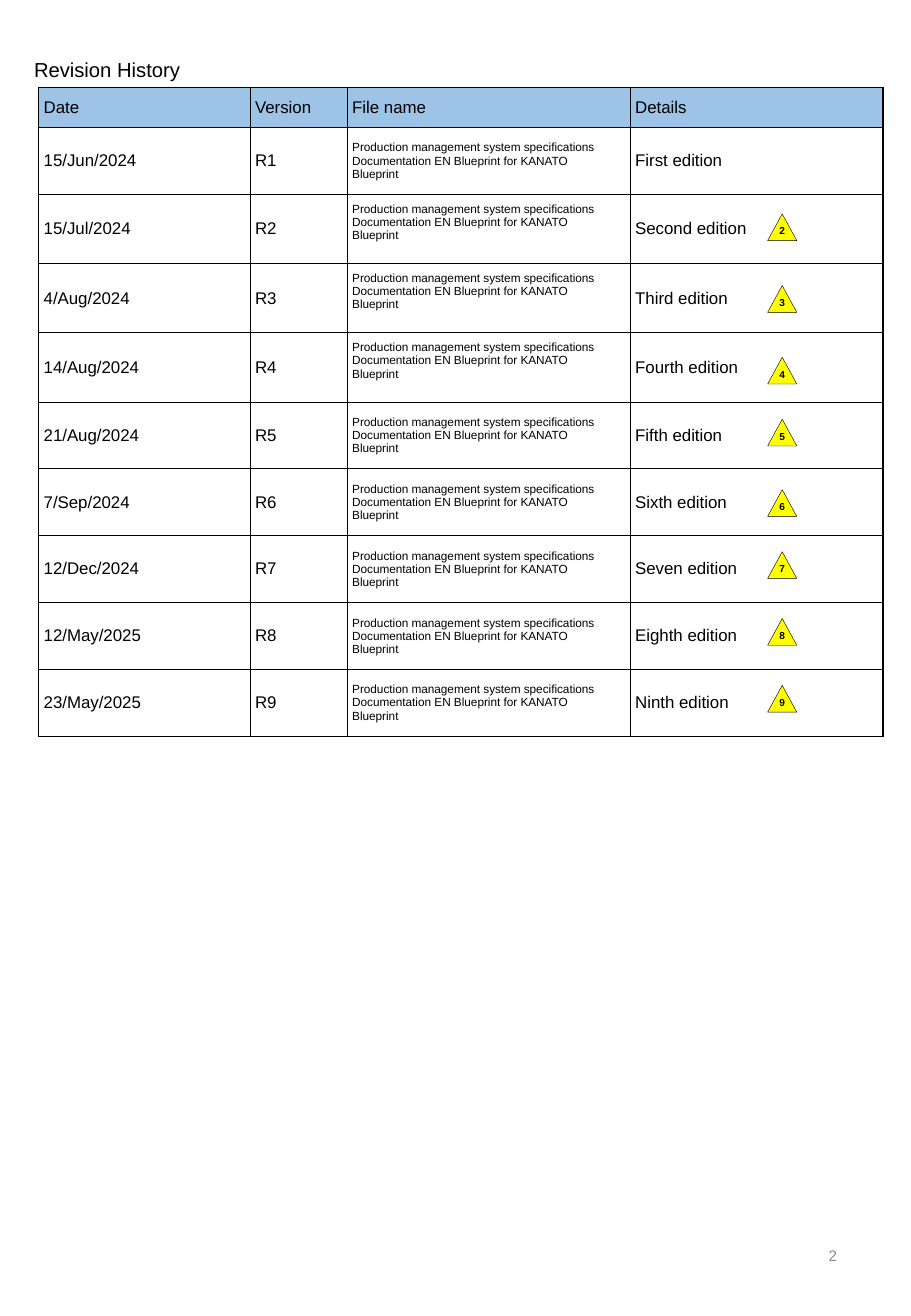
from lxml.etree import SubElement
from pptx import Presentation
from pptx.dml.color import RGBColor
from pptx.enum.shapes import MSO_SHAPE
from pptx.enum.text import MSO_ANCHOR, MSO_AUTO_SIZE, PP_ALIGN
from pptx.oxml.ns import qn
from pptx.util import Inches, Pt

COLORS = {"text": "000000", "header": "9DC3E6", "marker": "FFFF00", "page": "8C8C8C"}
FILE_LINES = [
    "Production management system specifications",
    "Documentation EN Blueprint for KANATO",
    "Blueprint",
]
# Date, edition, top of the revision marker
REVISIONS = [
    ("15/Jun/2024", "First edition", None),
    ("15/Jul/2024", "Second edition", 1.76),
    ("4/Aug/2024", "Third edition", 2.35),
    ("14/Aug/2024", "Fourth edition", 2.94),
    ("21/Aug/2024", "Fifth edition", 3.45),
    ("7/Sep/2024", "Sixth edition", 4.03),
    ("12/Dec/2024", "Seven edition", 4.54),
    ("12/May/2025", "Eighth edition", 5.09),
    ("23/May/2025", "Ninth edition", 5.64),
]
COLUMN_WIDTHS = [1.74, 0.8, 2.33, 2.08]
TALL_ROWS = (2, 3, 4)


def write(frame, lines, size, color="text", align=PP_ALIGN.LEFT, bold=False):
    for i, line in enumerate(lines):
        paragraph = frame.add_paragraph() if i else frame.paragraphs[0]
        paragraph.alignment = align
        run = paragraph.add_run()
        run.text = line
        run.font.name = "Arial"
        run.font.size = Pt(size)
        run.font.bold = bold
        run.font.color.rgb = RGBColor.from_string(COLORS[color])


def add_borders(cell):
    properties = cell._tc.get_or_add_tcPr()
    for i, side in enumerate(("lnL", "lnR", "lnT", "lnB")):
        border = SubElement(properties, qn(f"a:{side}"), w=str(Pt(0.75)))
        fill = SubElement(border, qn("a:solidFill"))
        SubElement(fill, qn("a:srgbClr"), val=COLORS["text"])
        properties.insert(i, border)


prs = Presentation()
prs.slide_width, prs.slide_height = Inches(7.5), Inches(10.83)
slide = prs.slides.add_slide(prs.slide_layouts[5])

# Title
heading = slide.shapes.title
heading.left, heading.top = Inches(0.12), Inches(0.42)
heading.width, heading.height = Inches(1.56), Inches(0.3)
heading.text_frame.auto_size = MSO_AUTO_SIZE.NONE
heading.text_frame.vertical_anchor = MSO_ANCHOR.MIDDLE
write(heading.text_frame, ["Revision History"], 12)
heading_format = heading.text_frame.paragraphs[0]._p.get_or_add_pPr()
heading_format.set("marL", "0")
heading_format.set("indent", str(Inches(0.06)))

# Revision table
rows = [[["Date"], ["Version"], ["File name"], ["Details"]]]
for number, (date, edition, _) in enumerate(REVISIONS, 1):
    rows.append([[date], [f"R{number}"], FILE_LINES, [edition]])

history = slide.shapes.add_table(
    len(rows), len(COLUMN_WIDTHS), Inches(0.32), Inches(0.72), Inches(6.95), Inches(5.35)
).table
history.first_row = history.horz_banding = False
for column, width in zip(history.columns, COLUMN_WIDTHS):
    column.width = Inches(width)

for r, row in enumerate(rows):
    history.rows[r].height = Inches(0.33 if r == 0 else 0.57 if r in TALL_ROWS else 0.55)
    for c, lines in enumerate(row):
        cell = history.cell(r, c)
        cell.vertical_anchor = MSO_ANCHOR.MIDDLE
        cell.margin_left, cell.margin_right = Inches(0.04), Inches(0.1)
        cell.margin_top = Inches(0.05)
        # File names sit a little higher in the tall rows
        cell.margin_bottom = Inches(0.16 if r in TALL_ROWS and c == 2 else 0.05)
        if r == 0:
            cell.fill.solid()
            cell.fill.fore_color.rgb = RGBColor.from_string(COLORS["header"])
        else:
            cell.fill.background()
        add_borders(cell)
        write(cell.text_frame, lines, 7 if lines is FILE_LINES else 10)

# Page number
page_number = slide.shapes.add_textbox(Inches(5.3), Inches(10.04), Inches(1.69), Inches(0.58))
page_number.text_frame.word_wrap = True
page_number.text_frame.vertical_anchor = MSO_ANCHOR.MIDDLE
write(page_number.text_frame, ["2"], 9, "page", PP_ALIGN.RIGHT)

# Revision markers
for number, (_, _, top) in enumerate(REVISIONS, 1):
    if top is None:
        continue
    marker = slide.shapes.add_shape(
        MSO_SHAPE.ISOSCELES_TRIANGLE, Inches(6.32), Inches(top), Inches(0.24), Inches(0.22)
    )
    marker.shadow.inherit = False
    marker.fill.solid()
    marker.fill.fore_color.rgb = RGBColor.from_string(COLORS["marker"])
    marker.line.color.rgb = RGBColor.from_string(COLORS["text"])
    marker.line.width = Pt(0.25)
    marker.text_frame.margin_top = 0
    marker.text_frame.vertical_anchor = MSO_ANCHOR.MIDDLE
    write(marker.text_frame, [str(number)], 6, align=PP_ALIGN.CENTER, bold=True)

prs.save("out.pptx")
